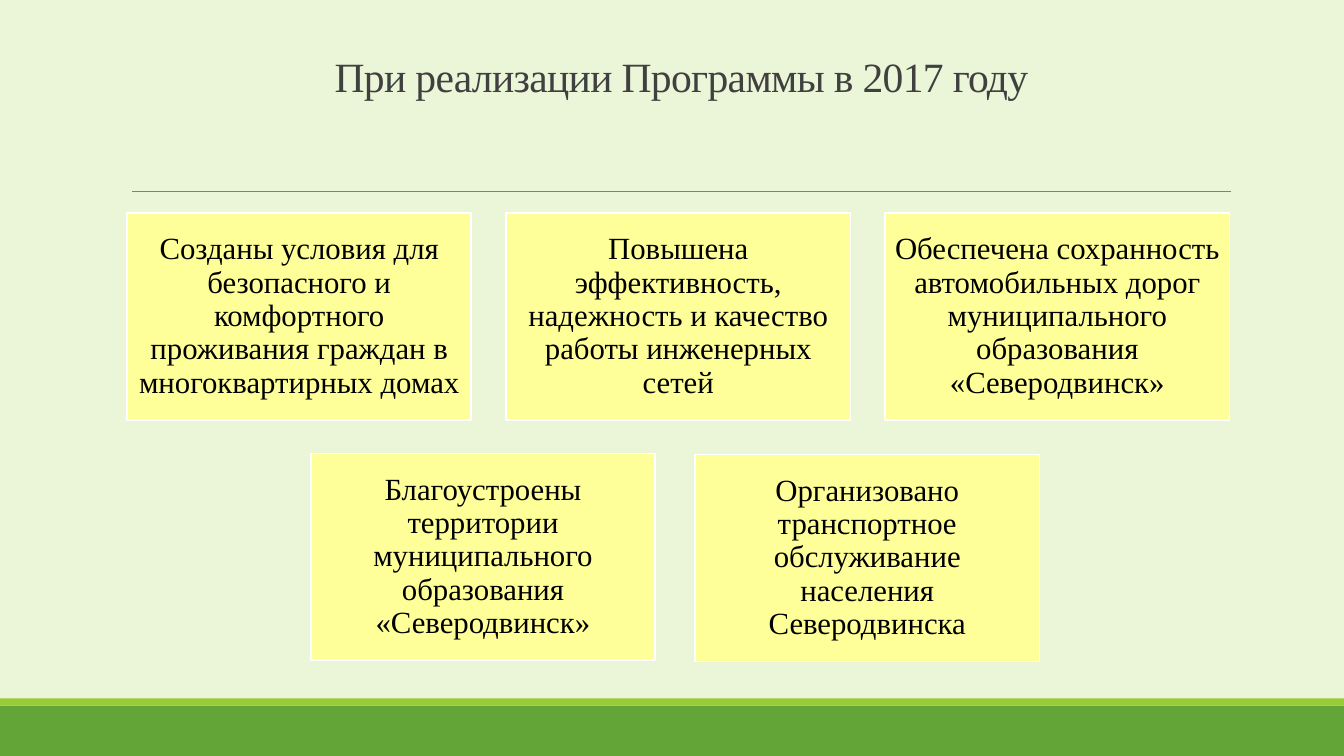
from dataclasses import dataclass

from lxml import etree
from pptx import Presentation
from pptx.dml.color import RGBColor
from pptx.enum.shapes import MSO_CONNECTOR, MSO_SHAPE
from pptx.enum.text import MSO_ANCHOR, PP_ALIGN
from pptx.oxml.ns import qn
from pptx.slide import Slide
from pptx.text.text import TextFrame
from pptx.util import Emu, Pt

RECTANGLE = MSO_SHAPE.RECTANGLE
STRAIGHT = MSO_CONNECTOR.STRAIGHT
CENTER = PP_ALIGN.CENTER
MIDDLE = MSO_ANCHOR.MIDDLE
BOTTOM = MSO_ANCHOR.BOTTOM

EMU_PER_PX = 9525
SLIDE_WIDTH, SLIDE_HEIGHT = 1280, 720


@dataclass(frozen=True)
class Theme:
    font: str = "Times New Roman"
    background: str = "EBF5D7"
    footer: str = "63A537"
    footer_edge: str = "99CB38"
    rule: str = "808080"
    card: str = "FFFF99"
    card_border: str = "FFFFFF"
    title_text: str = "404040"
    card_text: str = "000000"
    title_size: float = 29.7
    card_size: float = 22
    rule_width: float = 0.5
    border_width: float = 1.25


@dataclass(frozen=True)
class Box:
    left: int
    top: int
    width: int
    height: int


@dataclass(frozen=True)
class Card:
    left: int
    top: int
    text: str


THEME = Theme()
CARD_WIDTH, CARD_HEIGHT, CARD_INSET = 328, 197, 8
FIRST_LEFT, CARD_STEP, FIRST_TOP = 121, 361, 203

TITLE = "При реализации Программы в 2017 году"
TITLE_BOX = Box(121, 30, 1056, 71)
UPPER_TEXTS = [
    "Созданы условия для безопасного и комфортного проживания граждан в многоквартирных домах",
    "Повышена эффективность, надежность и качество работы инженерных сетей",
    "Обеспечена сохранность автомобильных дорог муниципального образования «Северодвинск»",
]
CARDS = [
    Card(FIRST_LEFT + index * CARD_STEP, FIRST_TOP, text)
    for index, text in enumerate(UPPER_TEXTS)
] + [
    Card(296, 432, "Благоустроены территории муниципального образования «Северодвинск»"),
    Card(662, 433, "Организовано транспортное обслуживание населения Северодвинска"),
]


def px(length: int) -> Emu:
    return Emu(length * EMU_PER_PX)


def color(value: str) -> RGBColor:
    return RGBColor.from_string(value)


def add_rectangle(slide: Slide, box: Box, fill: str, border: str | None = None) -> TextFrame:
    shape = slide.shapes.add_shape(
        RECTANGLE, px(box.left), px(box.top), px(box.width), px(box.height)
    )
    shape.shadow.inherit = False
    shape.fill.solid()
    shape.fill.fore_color.rgb = color(fill)
    if border:
        shape.line.color.rgb = color(border)
        shape.line.width = Pt(THEME.border_width)
    else:
        shape.line.fill.background()
    return shape.text_frame


def write_text(frame: TextFrame, text: str, size: float, text_color: str,
               line_spacing: float, anchor: MSO_ANCHOR, tracking: float = 0) -> None:
    frame.word_wrap = True
    frame.vertical_anchor = anchor
    paragraph = frame.paragraphs[0]
    paragraph.alignment = CENTER
    paragraph.line_spacing = line_spacing
    run = paragraph.add_run()
    run.text = text
    run.font.name = THEME.font
    run.font.size = Pt(size)
    run.font.color.rgb = color(text_color)
    if tracking:
        run.font._element.set("spc", str(round(tracking * 100)))


def add_rule(slide: Slide, left: int, right: int, top: int) -> None:
    rule = slide.shapes.add_connector(STRAIGHT, px(left), px(top), px(right), px(top))
    rule.line.color.rgb = color(THEME.rule)
    rule.line.width = Pt(THEME.rule_width)
    etree.SubElement(rule._element.spPr, qn("a:effectLst"))


def add_title(slide: Slide, box: Box, text: str) -> None:
    title = slide.shapes.add_textbox(
        px(box.left), px(box.top), px(box.width), px(box.height)
    )
    write_text(title.text_frame, text, THEME.title_size, THEME.title_text,
               0.85, BOTTOM, tracking=-0.5)


def add_card(slide: Slide, card: Card) -> None:
    box = Box(card.left, card.top, CARD_WIDTH, CARD_HEIGHT)
    frame = add_rectangle(slide, box, THEME.card, THEME.card_border)
    frame.margin_left = frame.margin_right = px(CARD_INSET)
    frame.margin_top = frame.margin_bottom = px(CARD_INSET)
    write_text(frame, card.text, THEME.card_size, THEME.card_text, 0.9, MIDDLE)


def main() -> None:
    presentation = Presentation()
    presentation.slide_width = px(SLIDE_WIDTH)
    presentation.slide_height = px(SLIDE_HEIGHT)
    slide = presentation.slides.add_slide(presentation.slide_layouts[6])

    # Background and footer bands
    slide.background.fill.solid()
    slide.background.fill.fore_color.rgb = color(THEME.background)
    add_rectangle(slide, Box(0, 672, SLIDE_WIDTH, 48), THEME.footer)
    add_rectangle(slide, Box(0, 665, SLIDE_WIDTH, 7), THEME.footer_edge)

    # Title and rule
    add_rule(slide, 126, 1172, 182)
    add_title(slide, TITLE_BOX, TITLE)

    # Result cards
    for card in CARDS:
        add_card(slide, card)

    presentation.save("out.pptx")


if __name__ == "__main__":
    main()
